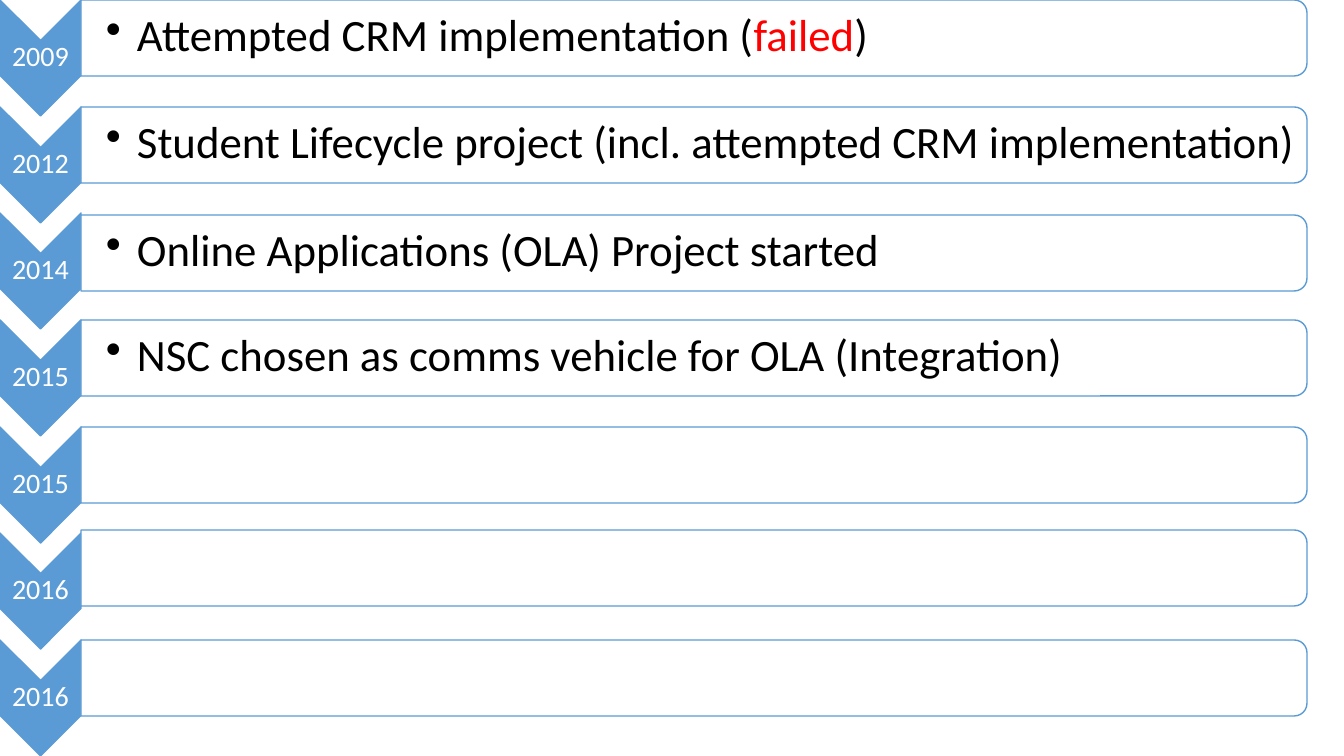
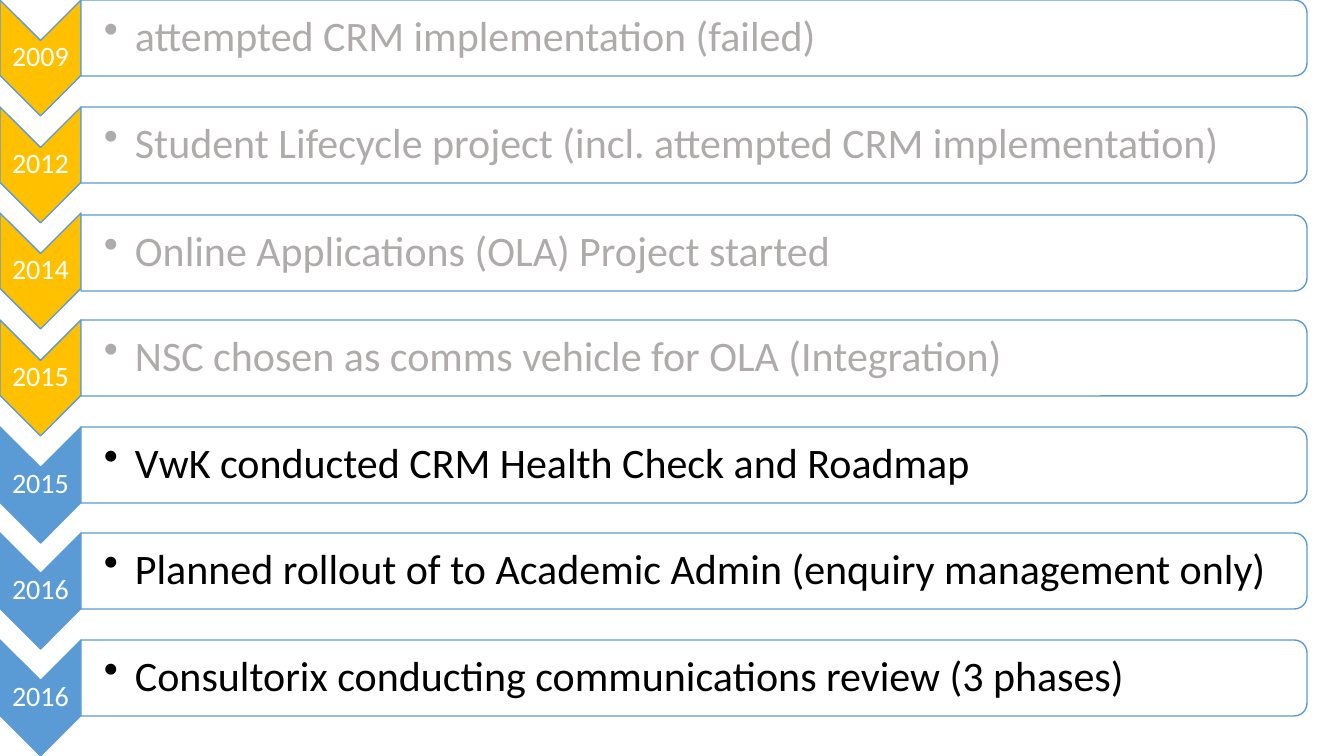
import pptx
import pptx.dml.color
import pptx.enum.shapes
import pptx.enum.text
import pptx.oxml.ns
import pptx.util
import lxml.etree

RGBColor = pptx.dml.color.RGBColor
BLUE = RGBColor(0x5B, 0x9B, 0xD5)
GOLD = RGBColor(0xFF, 0xC0, 0x00)
WHITE = RGBColor(0xFF, 0xFF, 0xFF)
BLACK = RGBColor(0x00, 0x00, 0x00)
RED = RGBColor(0xFF, 0x00, 0x00)
GREY = RGBColor(0xAF, 0xAB, 0xAB)

FONT = "Calibri"
SLIDE_WIDTH, SLIDE_HEIGHT = 1344, 756
EMU_PER_PX = 12192000 / SLIDE_WIDTH

CHEVRON_WIDTH, CHEVRON_HEIGHT = 81, 116
BAR_WIDTH, BAR_HEIGHT = 1226, 76
ROW_PITCH = 320 / 3
BULLET_INDENT = 31

YEARS = ["2009", "2012", "2014", "2015", "2015", "2016", "2016"]

# Each event is a list of (text, colour) runs
EARLY_EVENTS = [
    [("Attempted CRM implementation (", BLACK), ("failed", RED), (")", BLACK)],
    [("Student Lifecycle project (incl. attempted CRM implementation)", BLACK)],
    [("Online Applications (OLA) Project started", BLACK)],
    [("NSC chosen as comms vehicle for OLA (Integration)", BLACK)],
    [], [], [],
]
ALL_EVENTS = [
    [("attempted CRM implementation (failed)", GREY)],
    [("Student Lifecycle project (incl. attempted CRM implementation)", GREY)],
    [("Online Applications (OLA) Project started", GREY)],
    [("NSC chosen as comms vehicle for OLA (Integration)", GREY)],
    [("VwK conducted CRM Health Check and Roadmap", BLACK)],
    [("Planned rollout of to Academic Admin (enquiry management only)", BLACK)],
    [("Consultorix conducting communications review (3 phases)", BLACK)],
]


def px(length):
    return pptx.util.Emu(round(length * EMU_PER_PX))


def add_turned_shape(slide, preset, left, top, width, height, fill):
    """Add a shape turned a quarter clockwise that fills the given visible box."""
    shift = (width - height) / 2
    shape = slide.shapes.add_shape(
        preset, px(left + shift), px(top - shift), px(height), px(width))
    shape.rotation = 90
    shape.shadow.inherit = False
    shape.fill.solid()
    shape.fill.fore_color.rgb = fill
    shape.line.color.rgb = BLUE
    shape.line.width = pptx.util.Pt(1)
    return shape


def add_label(slide, left, top, width, height, runs, size, insets):
    """Add a one-line, vertically centred text box and return its paragraph."""
    frame = slide.shapes.add_textbox(
        px(left), px(top), px(width), px(height)).text_frame
    frame.word_wrap = True
    frame.vertical_anchor = pptx.enum.text.MSO_ANCHOR.MIDDLE
    frame.margin_left = px(insets[0])
    frame.margin_top = frame.margin_right = frame.margin_bottom = px(insets[1])
    paragraph = frame.paragraphs[0]
    paragraph.line_spacing = 0.9
    paragraph.font.name = FONT
    paragraph.font.size = pptx.util.Pt(size)
    for text, colour in runs:
        run = paragraph.add_run()
        run.text = text
        run.font.color.rgb = colour
    return paragraph


def add_bullet(paragraph):
    properties = paragraph._p.get_or_add_pPr()
    properties.set("marL", str(px(BULLET_INDENT)))
    properties.set("indent", str(-px(BULLET_INDENT)))
    bullet = lxml.etree.Element(pptx.oxml.ns.qn("a:buChar"), char="•")
    defaults = properties.find(pptx.oxml.ns.qn("a:defRPr"))
    defaults.addprevious(bullet)


def add_year(slide, left, top, year, fill):
    add_turned_shape(slide, pptx.enum.shapes.MSO_SHAPE.CHEVRON,
                     left, top, CHEVRON_WIDTH, CHEVRON_HEIGHT, fill)
    paragraph = add_label(slide, left, top + 40, CHEVRON_WIDTH, 34,
                          [(year, WHITE)], 20, (1, 1))
    paragraph.alignment = pptx.enum.text.PP_ALIGN.CENTER


def add_event(slide, left, top, runs, size, inset):
    bar = add_turned_shape(slide, pptx.enum.shapes.MSO_SHAPE.ROUND_2_SAME_RECTANGLE,
                           left, top, BAR_WIDTH, BAR_HEIGHT, WHITE)
    # Slightly transparent fill
    colour = bar.fill._xPr.find(".//" + pptx.oxml.ns.qn("a:srgbClr"))
    lxml.etree.SubElement(colour, pptx.oxml.ns.qn("a:alpha"), val="90000")
    if runs:
        paragraph = add_label(slide, left, top + 4, BAR_WIDTH - 3, 67,
                              runs, size, (inset, 2))
        paragraph.level = 1
        add_bullet(paragraph)


def add_timeline(presentation, events, size, inset, past_rows, bar_shifts):
    """Add a slide with one year chevron and one event bar per row."""
    slide = presentation.slides.add_slide(presentation.slide_layouts[6])
    for row, (year, runs) in enumerate(zip(YEARS, events)):
        top = round(row * ROW_PITCH)
        add_year(slide, 0, top, year, GOLD if row < past_rows else BLUE)
        add_event(slide, CHEVRON_WIDTH, top + bar_shifts.get(row, 0),
                  runs, size, inset)


def main():
    presentation = pptx.Presentation()
    presentation.slide_width = px(SLIDE_WIDTH)
    presentation.slide_height = px(SLIDE_HEIGHT)
    add_timeline(presentation, EARLY_EVENTS, size=32, inset=25,
                 past_rows=0, bar_shifts={2: 2, 5: -3})
    add_timeline(presentation, ALL_EVENTS, size=30, inset=23,
                 past_rows=4, bar_shifts={2: 2})
    presentation.save("out.pptx")


if __name__ == "__main__":
    main()
